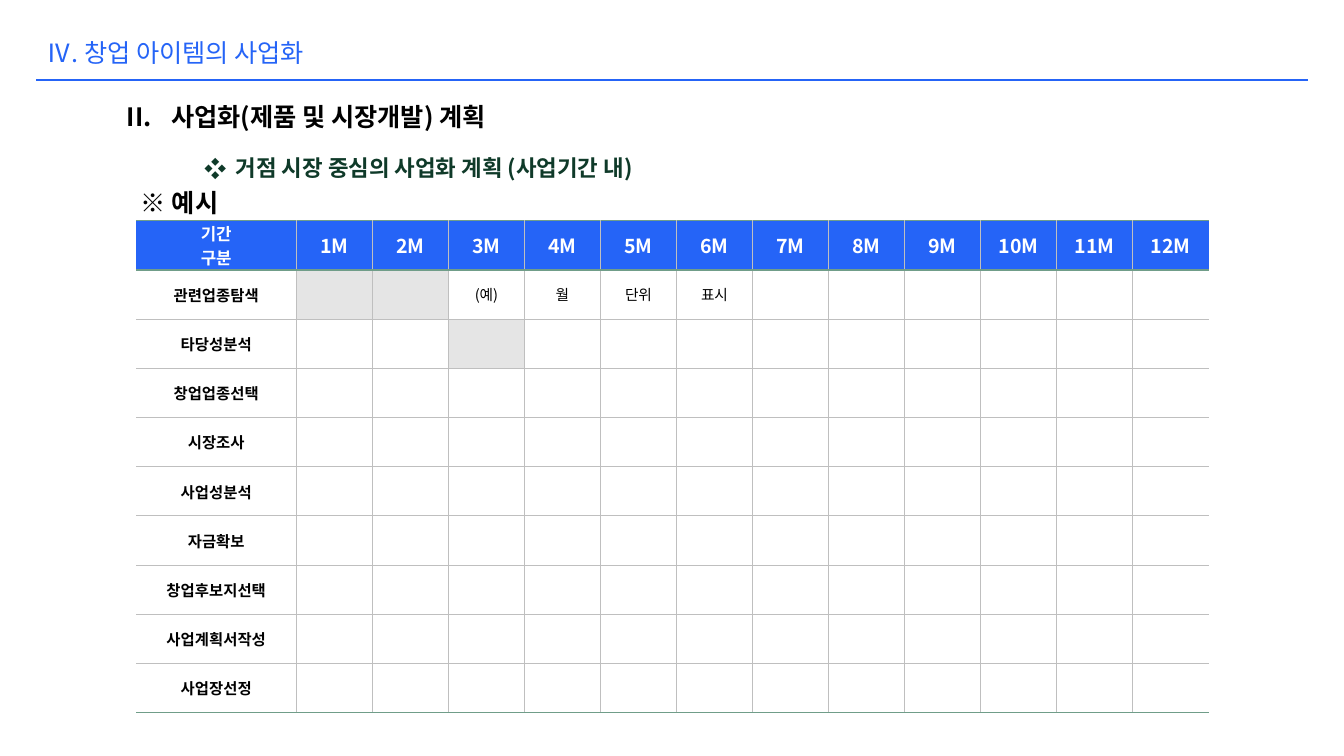
from lxml import etree
from pptx import Presentation
from pptx.dml.color import RGBColor
from pptx.enum.shapes import MSO_CONNECTOR
from pptx.enum.text import MSO_ANCHOR, MSO_AUTO_SIZE, PP_ALIGN
from pptx.oxml.ns import qn
from pptx.util import Inches, Pt

FONT = "Noto Sans CJK KR"
BLUE = RGBColor(0x25, 0x64, 0xF7)
BLACK = RGBColor(0, 0, 0)
WHITE = RGBColor(0xFF, 0xFF, 0xFF)
DARK_GREEN = RGBColor(0x0F, 0x3A, 0x29)
RULE_GREEN = RGBColor(0x70, 0x9D, 0x89)
GRID_GRAY = RGBColor(0xBF, 0xBF, 0xBF)
DONE_GRAY = RGBColor(0xE5, 0xE5, 0xE5)

MONTHS = [f"{month}M" for month in range(1, 13)]
TASKS = ["관련업종탐색", "타당성분석", "창업업종선택", "시장조사", "사업성분석",
         "자금확보", "창업후보지선택", "사업계획서작성", "사업장선정"]
EXAMPLE_NOTES = {(1, 3): "(예)", (1, 4): "월", (1, 5): "단위", (1, 6): "표시"}
SCHEDULED = {(1, 1), (1, 2), (2, 3)}


def write_text(frame, text, size=18, color=BLACK, bold=False, align=None):
    """Fill a text frame, one paragraph for each line of text."""
    for index, line in enumerate(text.split("\n")):
        para = frame.add_paragraph() if index else frame.paragraphs[0]
        para.alignment = align
        span = para.add_run()
        span.text = line
        span.font.name = FONT
        span.font.size = Pt(size)
        span.font.bold = bold
        span.font.color.rgb = color
        etree.SubElement(span.font._element, qn("a:ea"), typeface=FONT)


def add_text_box(page, left, top, width, height, text, wrap=True, grow=True, **style):
    box = page.shapes.add_textbox(Inches(left), Inches(top), Inches(width), Inches(height))
    frame = box.text_frame
    frame.word_wrap = wrap
    frame.auto_size = MSO_AUTO_SIZE.SHAPE_TO_FIT_TEXT if grow else MSO_AUTO_SIZE.NONE
    write_text(frame, text, **style)
    return box


def set_bullet(box, indent, tag, **attributes):
    properties = box.text_frame.paragraphs[0]._p.get_or_add_pPr()
    properties.set("marL", str(Inches(indent)))
    properties.set("indent", str(-Inches(indent)))
    etree.SubElement(properties, qn("a:buFont"), typeface=FONT)
    etree.SubElement(properties, qn(tag), **attributes)


def add_rule(page, left, right, top):
    rule = page.shapes.add_connector(
        MSO_CONNECTOR.STRAIGHT, Inches(left), Inches(top), Inches(right), Inches(top))
    rule.line.color.rgb = BLUE
    rule.line.width = Pt(1.5)
    etree.SubElement(rule._element.spPr, qn("a:effectLst"))


def set_border(cell, side, color=None, width=0.5):
    """Draw one cell edge (L, R, T or B); no color means no line."""
    edge = etree.SubElement(cell._tc.get_or_add_tcPr(), qn(f"a:ln{side}"), w=str(Pt(width)))
    if color is None:
        etree.SubElement(edge, qn("a:noFill"))
    else:
        fill = etree.SubElement(edge, qn("a:solidFill"))
        etree.SubElement(fill, qn("a:srgbClr"), val=str(color))


def set_borders(cell, row, column):
    heavy, light = (RULE_GREEN, 1), (GRID_GRAY, 0.5)
    set_border(cell, "L", GRID_GRAY if column > 0 else None)
    set_border(cell, "R", GRID_GRAY if column < len(MONTHS) else None)
    set_border(cell, "T", *(heavy if row <= 1 else light))
    set_border(cell, "B", *(heavy if row in (0, len(TASKS)) else light))


def cell_content(row, column):
    """Return the text, text format and fill of one schedule cell."""
    if row == 0:
        text = MONTHS[column - 1] if column else "기간\n구분"
        return text, dict(size=14 if column else 12, color=WHITE, bold=True), BLUE
    if column == 0:
        return TASKS[row - 1], dict(size=11, bold=True), WHITE
    fill = DONE_GRAY if (row, column) in SCHEDULED else None
    return EXAMPLE_NOTES.get((row, column), ""), dict(size=10.5), fill


def format_cell(cell, row, column):
    cell.vertical_anchor = MSO_ANCHOR.MIDDLE
    cell.margin_left = cell.margin_right = Inches(0.02)
    cell.margin_top = cell.margin_bottom = 0
    set_borders(cell, row, column)
    text, style, fill = cell_content(row, column)
    if fill is None:
        cell.fill.background()
    else:
        cell.fill.solid()
        cell.fill.fore_color.rgb = fill
    if text:
        write_text(cell.text_frame, text, align=PP_ALIGN.CENTER, **style)


def add_schedule(page, left, top, width, height, label_width):
    rows, columns = len(TASKS) + 1, len(MONTHS) + 1
    table = page.shapes.add_table(
        rows, columns, Inches(left), Inches(top), Inches(width), Inches(height)).table
    table.first_row = table.horz_banding = False
    month_width = (width - label_width) / len(MONTHS)
    for column in range(columns):
        table.columns[column].width = Inches(month_width if column else label_width)
    for row in range(rows):
        table.rows[row].height = Inches(height / rows)
        for column in range(columns):
            format_cell(table.cell(row, column), row, column)


def main():
    deck = Presentation()
    deck.slide_width, deck.slide_height = Inches(13.33), Inches(7.5)
    page = deck.slides.add_slide(deck.slide_layouts[6])
    add_rule(page, 0.36, 12.97, 0.79)
    add_text_box(page, 0.36, 0.32, 4.47, 0.52, "Ⅳ. 창업 아이템의 사업화", grow=False, color=BLUE)
    heading = add_text_box(page, 1.16, 0.96, 4.12, 0.4, "사업화(제품 및 시장개발) 계획",
                           wrap=False, bold=True)
    set_bullet(heading, 0.44, "a:buAutoNum", type="romanUcPeriod", startAt="2")
    subheading = add_text_box(page, 1.93, 1.48, 4.97, 0.37,
                              "거점 시장 중심의 사업화 계획 (사업기간 내)",
                              wrap=False, size=16, color=DARK_GREEN, bold=True)
    set_bullet(subheading, 0.31, "a:buChar", char="❖")
    add_schedule(page, 1.35, 2.19, 10.64, 4.88, label_width=1.59)
    add_text_box(page, 1.3, 1.81, 1.25, 0.4, "※ 예시", bold=True)
    deck.save("out.pptx")


if __name__ == "__main__":
    main()
